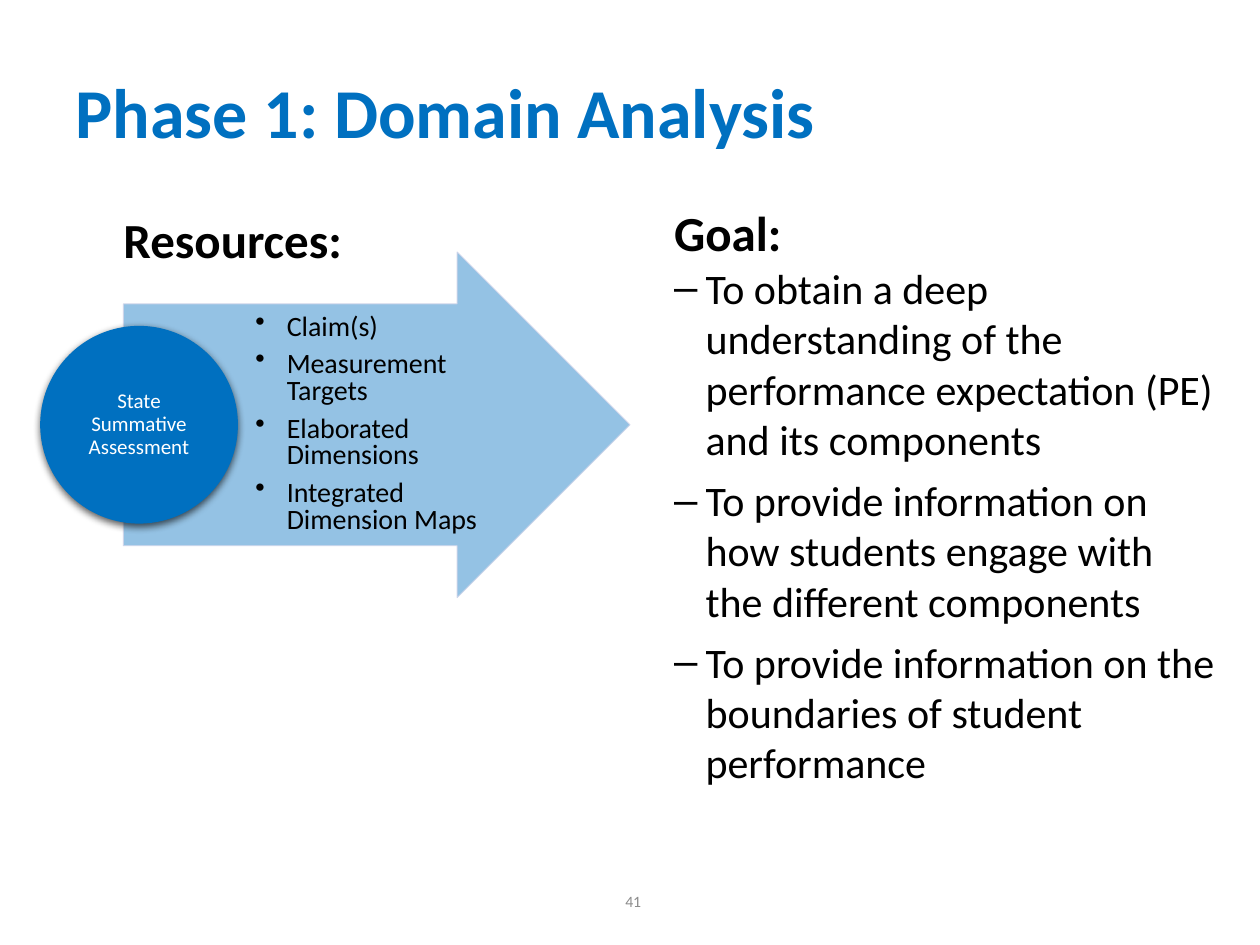
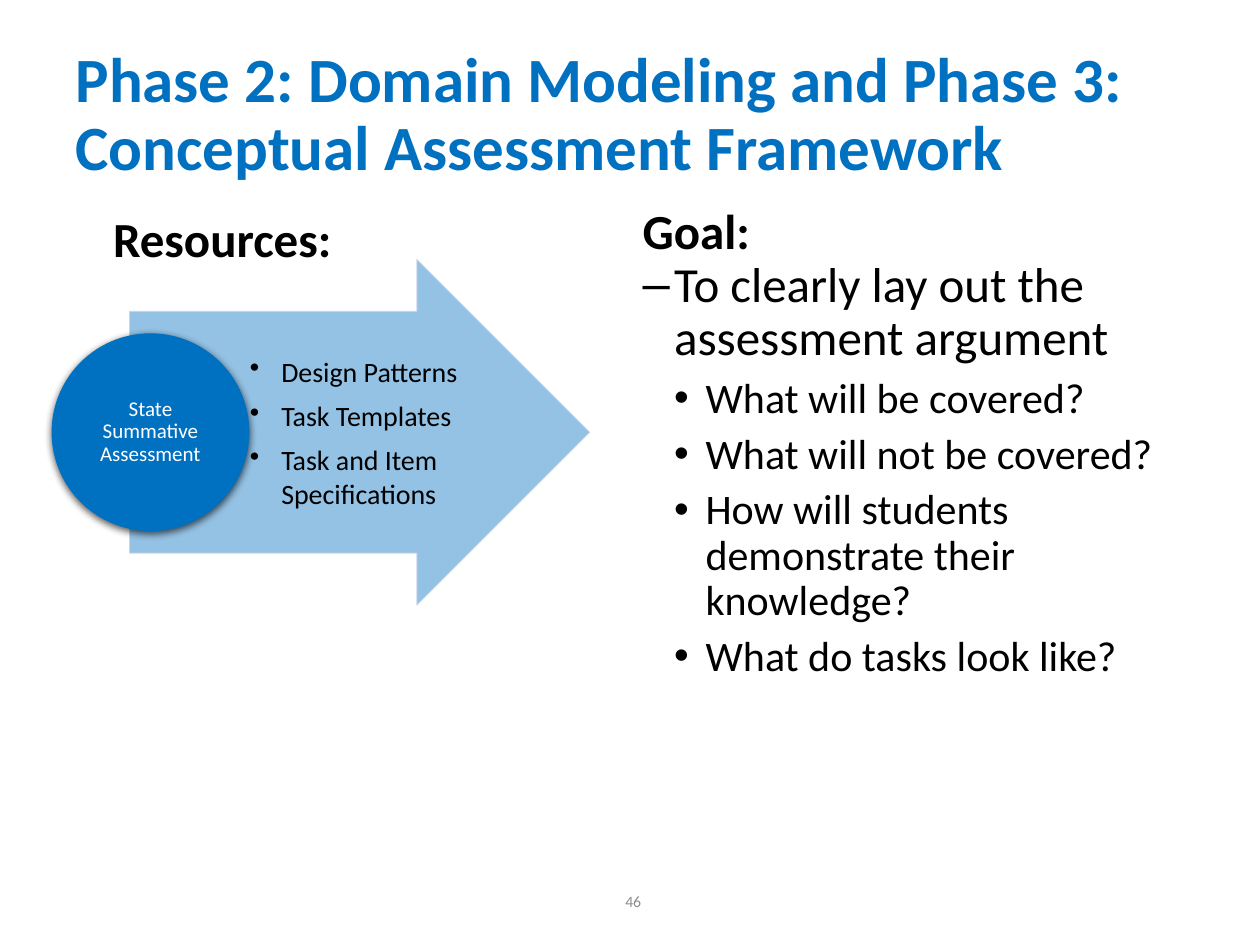
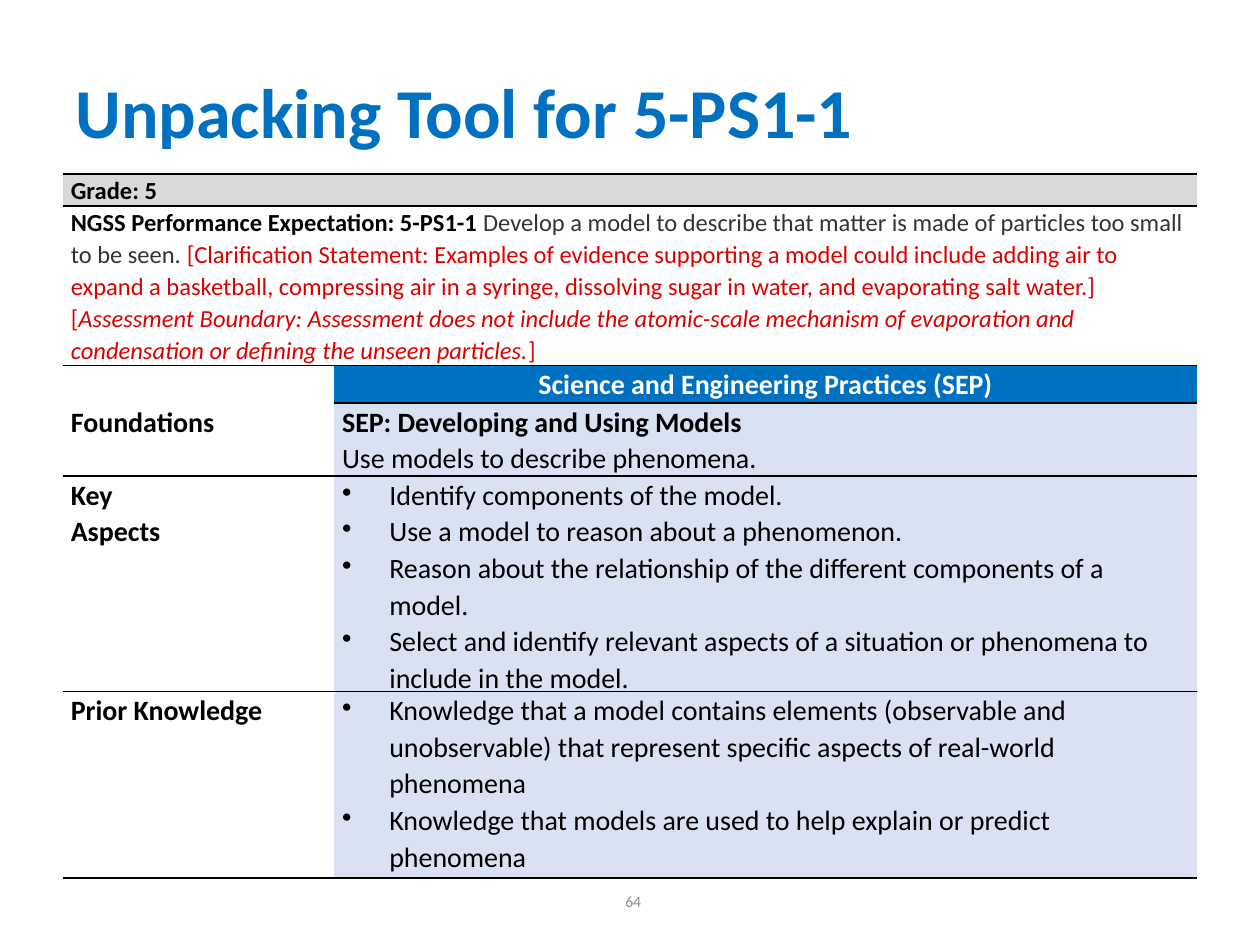
"""Build three assessment-design slides: two phase overviews and one unpacking table."""

from typing import NamedTuple, Sequence

from lxml import etree
from pptx import Presentation
from pptx.dml.color import RGBColor
from pptx.enum.shapes import MSO_SHAPE
from pptx.enum.text import MSO_ANCHOR, MSO_AUTO_SIZE, PP_ALIGN
from pptx.oxml.ns import qn
from pptx.util import Pt

LEFT, CENTER, RIGHT = PP_ALIGN.LEFT, PP_ALIGN.CENTER, PP_ALIGN.RIGHT
MIDDLE, NO_FIT = MSO_ANCHOR.MIDDLE, MSO_AUTO_SIZE.NONE
ARROW, CIRCLE = MSO_SHAPE.RIGHT_ARROW, MSO_SHAPE.OVAL

FONT = "Calibri"
BLUE, PALE_BLUE, WHITE, BLACK = "0070C0", "D9E2F3", "FFFFFF", "000000"
GREY, NUMBER_GREY, TEXT_GREY, RED = "D9D9D9", "8C8C8C", "333333", "DD0000"
ARROW_EDGE = "CFD5EA"

CIRCLE_SIZE = 113
ARROW_HEIGHT = 197.5
TABLE_LEADING = 1.07
BULLET, DASH = "•", "–"


class Area(NamedTuple):
    """A rectangle in points."""

    left: float
    top: float
    width: float
    height: float


class Span(NamedTuple):
    """A stretch of text with its own look."""

    text: str
    color: str = BLACK
    bold: bool = False
    italic: bool = False


class Line(NamedTuple):
    """One paragraph and its formatting."""

    content: str | Sequence[Span]
    size: float
    color: str = BLACK
    bold: bool = False
    align: PP_ALIGN = LEFT
    marker: str = ""
    level: int = 0
    indent: float = 0
    hanging: float = 0
    leading: float = 1.0
    after: float = 0


class Phase(NamedTuple):
    """A slide that sets resources beside a goal."""

    title: str
    title_size: float
    number: int
    heading: Area
    arrow: Area
    circle_left: float
    resources: Sequence[str]
    resource_leading: float
    goal: Area
    goal_lines: Sequence[Line]


class Row(NamedTuple):
    """A table row; a row without a second cell spans both columns."""

    height: float
    first: Sequence[Line]
    second: Sequence[Line] = ()
    first_fill: str = WHITE
    second_fill: str = PALE_BLUE


def rgb(color: str) -> RGBColor:
    """Turn a hex string into a colour."""
    return RGBColor.from_string(color)


def goal_line(text: str, marker: str = DASH, size: float = 24, level: int = 1, leading: float = 1.0) -> Line:
    """Describe a marked line in a goal list."""
    return Line(text, size, marker=marker, level=level, indent=18 * level, hanging=18, leading=leading, after=6)


def cell_line(content: str | Sequence[Span], size: float = 16, **look) -> Line:
    """Describe a line in a table cell."""
    return Line(content, size, leading=TABLE_LEADING, **look)


def cell_bullets(*texts: str) -> list[Line]:
    """Describe the bulleted lines of a table cell."""
    return [cell_line(text, marker=BULLET, indent=27, hanging=27) for text in texts]


def style_font(font, color: str, bold: bool, italic: bool = False) -> None:
    """Set the colour and weight of a font."""
    font.color.rgb = rgb(color)
    font.bold = bold
    font.italic = italic


def write_lines(frame, lines: Sequence[Line]) -> None:
    """Fill a text frame with formatted paragraphs."""
    for index, line in enumerate(lines):
        para = frame.paragraphs[0] if index == 0 else frame.add_paragraph()
        para.alignment = line.align
        para.level = line.level
        para.line_spacing = line.leading
        para.space_before = Pt(0)
        para.space_after = Pt(line.after)
        properties = para._p.get_or_add_pPr()
        properties.set("marL", str(Pt(line.indent)))
        properties.set("indent", str(-Pt(line.hanging)))
        if line.marker:
            etree.SubElement(properties, qn("a:buChar"), char=line.marker)
        else:
            etree.SubElement(properties, qn("a:buNone"))
        para.font.name = FONT
        para.font.size = Pt(line.size)
        if isinstance(line.content, str):
            style_font(para.font, line.color, line.bold)
            para.add_run().text = line.content
        else:
            for span in line.content:
                run = para.add_run()
                run.text = span.text
                style_font(run.font, span.color, span.bold, span.italic)


def set_margins(holder, left: float, top: float, right: float, bottom: float) -> None:
    """Set the margins of a text frame or cell."""
    holder.margin_left, holder.margin_top = Pt(left), Pt(top)
    holder.margin_right, holder.margin_bottom = Pt(right), Pt(bottom)


def fill_placeholder(shape, area: Area, lines: Sequence[Line]) -> None:
    """Move a placeholder and write its text."""
    shape.left, shape.top = Pt(area.left), Pt(area.top)
    shape.width, shape.height = Pt(area.width), Pt(area.height)
    shape.text_frame.auto_size = NO_FIT
    write_lines(shape.text_frame, lines)


def add_text(page, area: Area, line: Line, anchor: MSO_ANCHOR = MSO_ANCHOR.TOP) -> None:
    """Add a text box with one line."""
    frame = page.shapes.add_textbox(*map(Pt, area)).text_frame
    frame.word_wrap = True
    frame.vertical_anchor = anchor
    write_lines(frame, [line])


def add_page(deck, layout: int, title: str, size: float, number: int):
    """Add a page with the shared title and number."""
    page = deck.slides.add_slide(deck.slide_layouts[layout])
    fill_placeholder(page.shapes.title, Area(36, 21.5, 648, 90),
                     [Line(title, size, BLUE, bold=True, leading=0.9)])
    page.shapes.title.text_frame.vertical_anchor = MIDDLE
    add_text(page, Area(211.5, 500.5, 162, 29),
             Line(str(number), 9, NUMBER_GREY, align=RIGHT), MIDDLE)
    return page


def add_blue_shape(page, kind: MSO_SHAPE, area: Area, lines: Sequence[Line]):
    """Add a blue preset shape that holds text."""
    shape = page.shapes.add_shape(kind, *map(Pt, area))
    shape.shadow.inherit = False
    shape.fill.solid()
    shape.fill.fore_color.rgb = rgb(BLUE)
    shape.text_frame.word_wrap = True
    shape.text_frame.vertical_anchor = MIDDLE
    write_lines(shape.text_frame, lines)
    return shape


def set_alpha(fill, percent: int) -> None:
    """Set the opacity of a solid fill element."""
    etree.SubElement(fill[0], qn("a:alpha"), val=str(percent * 1000))


def add_resource_arrow(page, area: Area, texts: Sequence[str], leading: float) -> None:
    """Add the translucent arrow with the resource list."""
    lines = [Line(text, 16, marker=BULLET, level=1, indent=18, hanging=18, leading=leading, after=6)
             for text in texts]
    arrow = add_blue_shape(page, ARROW, area, lines)
    arrow.adjustments[0], arrow.adjustments[1] = 0.7, 0.5
    arrow.line.color.rgb = rgb(ARROW_EDGE)
    arrow.line.width = Pt(0.5)
    properties = arrow._element.spPr
    set_alpha(properties.find(qn("a:solidFill")), 42)
    set_alpha(properties.find(qn("a:ln")).find(qn("a:solidFill")), 90)
    set_margins(arrow.text_frame, area.width / 4 + 3, 0.75, 1.5, 0.75)


def add_assessment_circle(page, left: float, arrow: Area) -> None:
    """Add the shadowed circle, centred on the arrow's height."""
    area = Area(left, arrow.top + (arrow.height - CIRCLE_SIZE) / 2, CIRCLE_SIZE, CIRCLE_SIZE)
    circle = add_blue_shape(page, CIRCLE, area, [
        Line("State Summative Assessment", 12, WHITE, align=CENTER, leading=0.9)])
    circle.line.fill.background()
    set_margins(circle.text_frame, 0.75, 0.75, 0.75, 0.75)
    effects = circle._element.spPr.find(qn("a:effectLst"))
    shadow = etree.SubElement(effects, qn("a:outerShdw"), blurRad=str(Pt(4.5)),
                              dist=str(Pt(1.5)), dir="5400000", rotWithShape="0")
    set_alpha([etree.SubElement(shadow, qn("a:srgbClr"), val=BLACK)], 63)


def add_phase_page(deck, phase: Phase) -> None:
    """Add one phase overview page."""
    page = add_page(deck, 1, phase.title, phase.title_size, phase.number)
    goal = Line("Goal:", 28, bold=True, leading=0.9)
    fill_placeholder(page.placeholders[1], phase.goal, [goal, *phase.goal_lines])
    add_resource_arrow(page, phase.arrow, phase.resources, phase.resource_leading)
    add_assessment_circle(page, phase.circle_left, phase.arrow)
    add_text(page, phase.heading, Line("Resources:", 28, bold=True))


def set_border(cell, side: str, visible: bool) -> None:
    """Draw or hide one side of a cell."""
    border = etree.SubElement(cell._tc.get_or_add_tcPr(), qn(f"a:ln{side}"), w=str(Pt(1)))
    if visible:
        fill = etree.SubElement(border, qn("a:solidFill"))
        etree.SubElement(fill, qn("a:srgbClr"), val=BLACK)
    else:
        etree.SubElement(border, qn("a:noFill"))


def has_rule(edge: int, column: int) -> bool:
    """Tell whether a horizontal edge is ruled in a column."""
    return (edge, column) != (3, 0)


def add_unpacking_table(page, rows: Sequence[Row]) -> None:
    """Add the unpacking table."""
    widths = (155, 493)
    area = Area(36, 99.5, sum(widths), sum(row.height for row in rows))
    table = page.shapes.add_table(len(rows), len(widths), *map(Pt, area)).table
    table.first_row = table.horz_banding = False
    for column, width in zip(table.columns, widths):
        column.width = Pt(width)
    for index, row in enumerate(rows):
        table.rows[index].height = Pt(row.height)
        spans_both = row.first and not row.second
        if spans_both:
            table.cell(index, 0).merge(table.cell(index, 1))
        fills = (row.first_fill, row.first_fill if spans_both else row.second_fill)
        for column, (lines, color) in enumerate(zip((row.first, row.second), fills)):
            cell = table.cell(index, column)
            set_margins(cell, 4.5, 0, 4.5, 0)
            for side in "LR":
                set_border(cell, side, False)
            set_border(cell, "T", has_rule(index, column))
            set_border(cell, "B", has_rule(index + 1, column))
            cell.fill.solid()
            cell.fill.fore_color.rgb = rgb(color)
            write_lines(cell.text_frame, lines or [Line("", 12)])


PHASES = [
    Phase(
        "Phase 1: Domain Analysis", 40, 41,
        heading=Area(63.5, 116, 208, 41),
        arrow=Area(70.5, 144, 289.5, ARROW_HEIGHT),
        circle_left=23,
        resources=["Claim(s)", "Measurement Targets", "Elaborated Dimensions", "Integrated Dimension Maps"],
        resource_leading=0.8,
        goal=Area(378, 116, 324, 385),
        goal_lines=[
            goal_line("To obtain a deep understanding of the performance expectation (PE) and its components"),
            goal_line("To provide information on how students engage with the different components"),
            goal_line("To provide information on the boundaries of student performance"),
        ],
    ),
    Phase(
        "Phase 2: Domain Modeling and Phase 3: Conceptual Assessment Framework", 36, 46,
        heading=Area(57.5, 115.5, 140.5, 41),
        arrow=Area(74, 148.25, 263, ARROW_HEIGHT),
        circle_left=29.5,
        resources=["Design Patterns", "Task Templates", "Task and Item Specifications"],
        resource_leading=1.0,
        goal=Area(360, 115, 346.5, 349),
        goal_lines=[
            goal_line("To clearly lay out the assessment argument", size=28, leading=0.9),
            *(goal_line(question, BULLET, level=2, leading=0.9) for question in (
                "What will be covered?",
                "What will not be covered?",
                "How will students demonstrate their knowledge?",
                "What do tasks look like?",
            )),
        ],
    ),
]

EXPECTATION = [
    Span("NGSS Performance Expectation: 5-PS1-1 ", bold=True),
    Span("Develop a model to describe that matter is made of particles too small to be seen. ", TEXT_GREY),
    Span("[Clarification Statement: Examples of evidence supporting a model could include adding air to "
         "expand a basketball, compressing air in a syringe, dissolving sugar in water, and evaporating "
         "salt water.] [", RED),
    Span("Assessment Boundary: Assessment does not include the atomic-scale mechanism of evaporation and "
         "condensation or defining the unseen particles.", RED, italic=True),
    Span("]", RED),
]

UNPACKING_ROWS = [
    Row(18.25, [cell_line("Grade: 5", 14, bold=True, after=3)], first_fill=GREY),
    Row(91, [cell_line(EXPECTATION, 14, after=3)]),
    Row(21, [], [cell_line("Science and Engineering Practices (SEP)", color=WHITE, bold=True, align=CENTER)],
        second_fill=BLUE),
    Row(41.75, [cell_line("Foundations", bold=True)], [
        cell_line("SEP: Developing and Using Models", bold=True),
        cell_line("Use models to describe phenomena."),
    ]),
    Row(106.5, [cell_line("Key", bold=True), cell_line("Aspects", bold=True)], cell_bullets(
        "Identify components of the model.",
        "Use a model to reason about a phenomenon.",
        "Reason about the relationship of the different components of a model.",
        "Select and identify relevant aspects of a situation or phenomena to include in the model.",
    )),
    Row(106.5, [cell_line("Prior Knowledge", bold=True)], cell_bullets(
        "Knowledge that a model contains elements (observable and unobservable) that represent specific "
        "aspects of real-world phenomena",
        "Knowledge that models are used to help explain or predict phenomena",
    )),
]


def main() -> None:
    """Build and save the deck."""
    deck = Presentation()
    deck.slide_width, deck.slide_height = Pt(720), Pt(540)
    for phase in PHASES:
        add_phase_page(deck, phase)
    add_unpacking_table(add_page(deck, 5, "Unpacking Tool for 5-PS1-1", 40, 64), UNPACKING_ROWS)
    deck.save("out.pptx")


if __name__ == "__main__":
    main()
